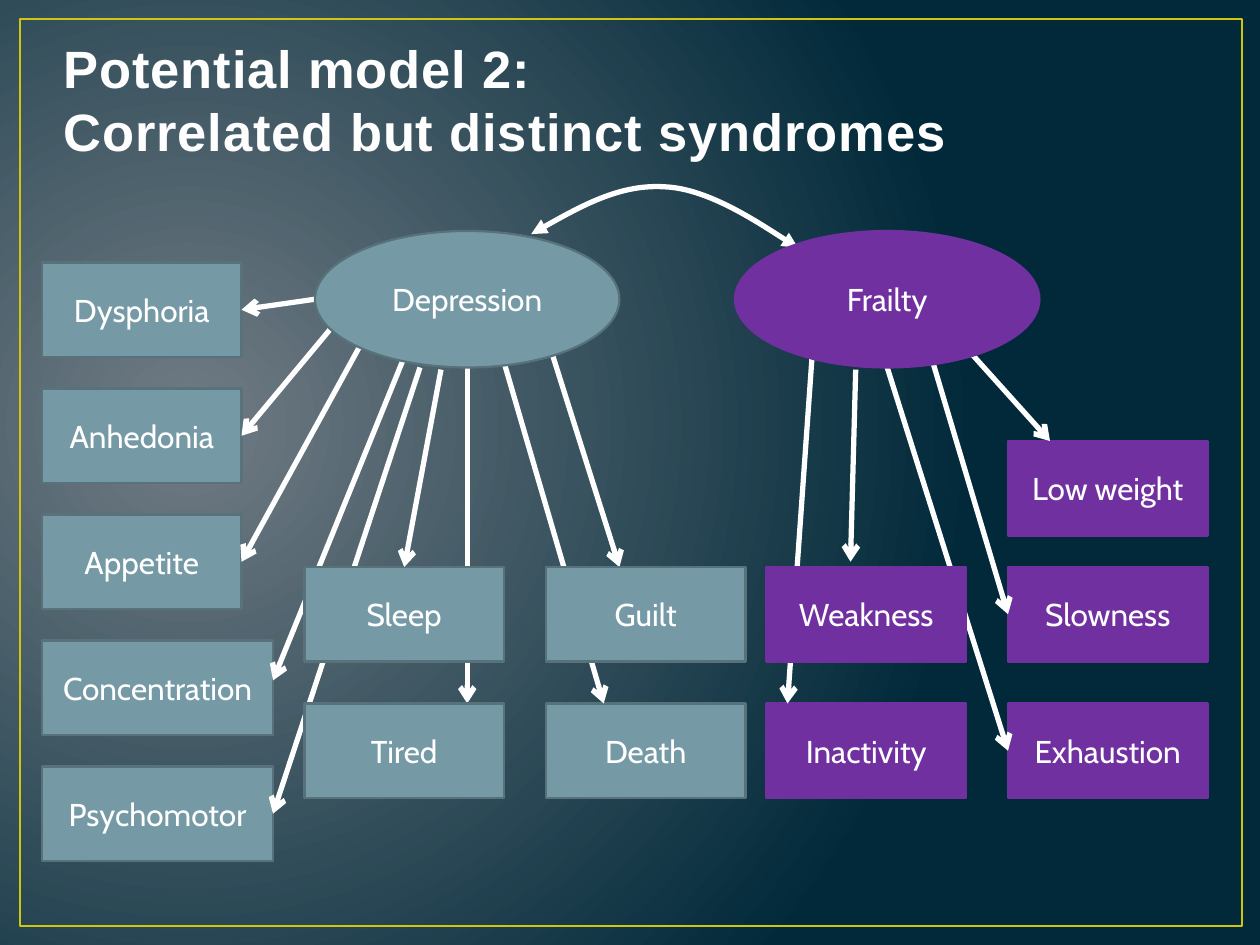
from lxml.etree import SubElement as sub
from pptx import Presentation
from pptx.dml.color import RGBColor as RGB
from pptx.enum.shapes import MSO_CONNECTOR as CON, MSO_SHAPE as SHAPE
from pptx.enum.text import MSO_ANCHOR as ANCHOR, PP_ALIGN as ALIGN
from pptx.oxml.ns import qn
from pptx.util import Inches, Pt

WHITE = RGB(0xFF, 0xFF, 0xFF)
PALE = RGB(0xFE, 0xFE, 0xFE)
GOLD = RGB(0xCF, 0xC6, 0x0D)
TEAL = RGB(0x75, 0x9A, 0xA5)
EDGE = RGB(0x57, 0x72, 0x7A)
PLUM = RGB(0x70, 0x30, 0xA0)
GREY = RGB(0x71, 0x7C, 0x84)
NAVY = RGB(0x01, 0x29, 0x3A)

COLS, ROWS = 120, 90  # grid cells across and down the slide
LEFT, RIGHT, TOP = 1, 3, 0  # sides of a box


def write(frame, text, size=18, font="Cabin", color=WHITE, bold=False,
          align=ALIGN.CENTER, anchor=ANCHOR.MIDDLE, space=0):
    """Put text in a frame with one format."""
    frame.word_wrap = True
    frame.vertical_anchor = anchor
    para = frame.paragraphs[0]
    para.text = text
    para.alignment = align
    for run in para.runs:
        run.font.size = Pt(size)
        run.font.name = font
        run.font.bold = bold
        run.font.color.rgb = color
        if space:
            run.font._element.set("spc", str(int(space * 100)))


class Deck:
    """Holds the style and the current slide; lengths are grid cells."""

    def __init__(self):
        self.prs = Presentation()
        self.prs.slide_width, self.prs.slide_height = Inches(10), Inches(7.5)
        self.slide = self.prs.slides.add_slide(self.prs.slide_layouts[6])
        self.shapes = self.slide.shapes

    def grid(self, *cells):
        """Turn x, y, x, y ... cells into slide lengths."""
        units = self.prs.slide_width / COLS, self.prs.slide_height / ROWS
        return [int(c * units[i % 2]) for i, c in enumerate(cells)]

    def glow(self, inner, outer):
        """Fill the background with a circular gradient."""
        fill = self.slide.background.fill
        fill.gradient()
        for stop, color, pos in zip(fill.gradient_stops, (inner, outer), (0, 1)):
            stop.color.rgb = color
            stop.position = pos
        grad = self.slide.background._cSld.find(".//" + qn("a:gradFill"))
        grad.remove(grad.find(qn("a:lin")))
        ring = sub(grad, qn("a:path"), {"path": "circle"})
        sub(ring, qn("a:fillToRect"), l="15000", t="50000", r="85000", b="60000")

    def title(self, text, *cells):
        box = self.shapes.add_textbox(*self.grid(*cells))
        write(box.text_frame, text, size=30, font="Arial", color=PALE, bold=True,
              align=ALIGN.LEFT, anchor=ANCHOR.BOTTOM, space=0.5)

    def node(self, kind, cells, fill=None, edge=EDGE, width=1.25, text=""):
        shape = self.shapes.add_shape(kind, *self.grid(*cells))
        shape.shadow.inherit = False
        if fill is None:
            shape.fill.background()
        else:
            shape.fill.solid()
            shape.fill.fore_color.rgb = fill
        shape.line.color.rgb = edge
        shape.line.width = Pt(width)
        if text:
            write(shape.text_frame, text)
        return shape

    def stroke(self, shape, **heads):
        """Style a line and its ends: head first, then tail."""
        shape.line.color.rgb = WHITE
        shape.line.width = Pt(3)
        props = shape._element.spPr
        for end, kind in heads.items():
            sub(props.find(qn("a:ln")), qn(f"a:{end}End"), type=kind)
        if props.find(qn("a:effectLst")) is None:
            sub(props, qn("a:effectLst"))

    def arrow(self, start, end=(0, 0), box=None, side=TOP):
        """Draw an arrow to a point, or to the middle of a box side."""
        line = self.shapes.add_connector(CON.STRAIGHT, *self.grid(*start, *end))
        if box is not None:
            line.end_connect(box, side)
        self.stroke(line, tail="arrow")

    def curve(self, start, *points):
        """Draw a Bezier curve; each three points make one segment."""
        first, *rest = [self.grid(*p) for p in (start, *points)]
        build = self.shapes.build_freeform(*first)
        build.add_line_segments(rest, close=False)
        shape = build.convert_to_shape()
        shape.shadow.inherit = False
        shape.fill.background()
        route = shape._element.spPr.find(".//" + qn("a:path"))
        legs = route.findall(qn("a:lnTo"))
        for i in range(0, len(legs), 3):
            bend = sub(route, qn("a:cubicBezTo"))
            for leg in legs[i:i + 3]:
                bend.append(leg[0])
                route.remove(leg)
        self.stroke(shape, head="triangle", tail="triangle")


def main():
    deck = Deck()
    deck.glow(GREY, NAVY)
    deck.node(SHAPE.RECTANGLE, (1.9, 1.8, 116.4, 86.4), edge=GOLD, width=1.5)
    deck.title("Potential model 2:\vCorrelated but distinct syndromes",
               4.9, 1, 108, 15)

    boxes = {}

    def place(text, x, y, wide=19, fill=TEAL, edge=EDGE):
        boxes[text] = deck.node(SHAPE.RECTANGLE, (x, y, wide, 9), fill, edge,
                                text=text)

    # Boxes behind the arrows
    left = ("Dysphoria", "Anhedonia", "Appetite", "Concentration", "Psychomotor")
    for i, text in enumerate(left):
        place(text, 4, 25 + 12 * i, wide=19 if i < 3 else 22)
    place("Death", 52, 67)
    for text, x, y in (("Low weight", 96, 42), ("Slowness", 96, 54),
                       ("Exhaustion", 96, 67), ("Inactivity", 73, 67)):
        place(text, x, y, fill=PLUM, edge=PLUM)

    # Arrows that join a box side
    for start, text, side in (
            ((30, 28.5), "Dysphoria", RIGHT), ((33, 29.5), "Anhedonia", RIGHT),
            ((34.2, 33.1), "Appetite", RIGHT), ((40, 35), "Psychomotor", RIGHT),
            ((84.5, 35), "Exhaustion", LEFT), ((88.1, 32), "Slowness", LEFT)):
        deck.arrow(start, box=boxes[text], side=side)

    # Arrows that end elsewhere on a box
    for start, end in (
            ((38.5, 34), (26, 64.8)), ((44.5, 35), (44.5, 67)),
            ((48, 34.5), (57.5, 67)), ((52.4, 33.1), (59, 54)),
            ((77.4, 33.1), (75, 67)), ((81.5, 35.2), (81, 53.5)),
            ((92, 33.1), (100, 42))):
        deck.arrow(start, end)

    # Boxes in front of the arrows
    for text, x, y in (("Sleep", 29, 54), ("Tired", 29, 67), ("Guilt", 52, 54)):
        place(text, x, y)
    place("Weakness", 73, 54, fill=PLUM, edge=PLUM)
    deck.arrow((42, 35.2), box=boxes["Sleep"], side=TOP)

    # Syndromes and the link between them
    deck.node(SHAPE.OVAL, (30, 22, 29, 13), TEAL, text="Depression")
    deck.curve((50.6, 22.3), (54.8, 19.9), (59.2, 17.5), (63.4, 17.8),
               (67.6, 18), (76, 23.6), (76, 23.6))
    deck.node(SHAPE.OVAL, (70, 22, 29, 13), PLUM, PLUM, text="Frailty")

    deck.prs.save("out.pptx")


if __name__ == "__main__":
    main()
